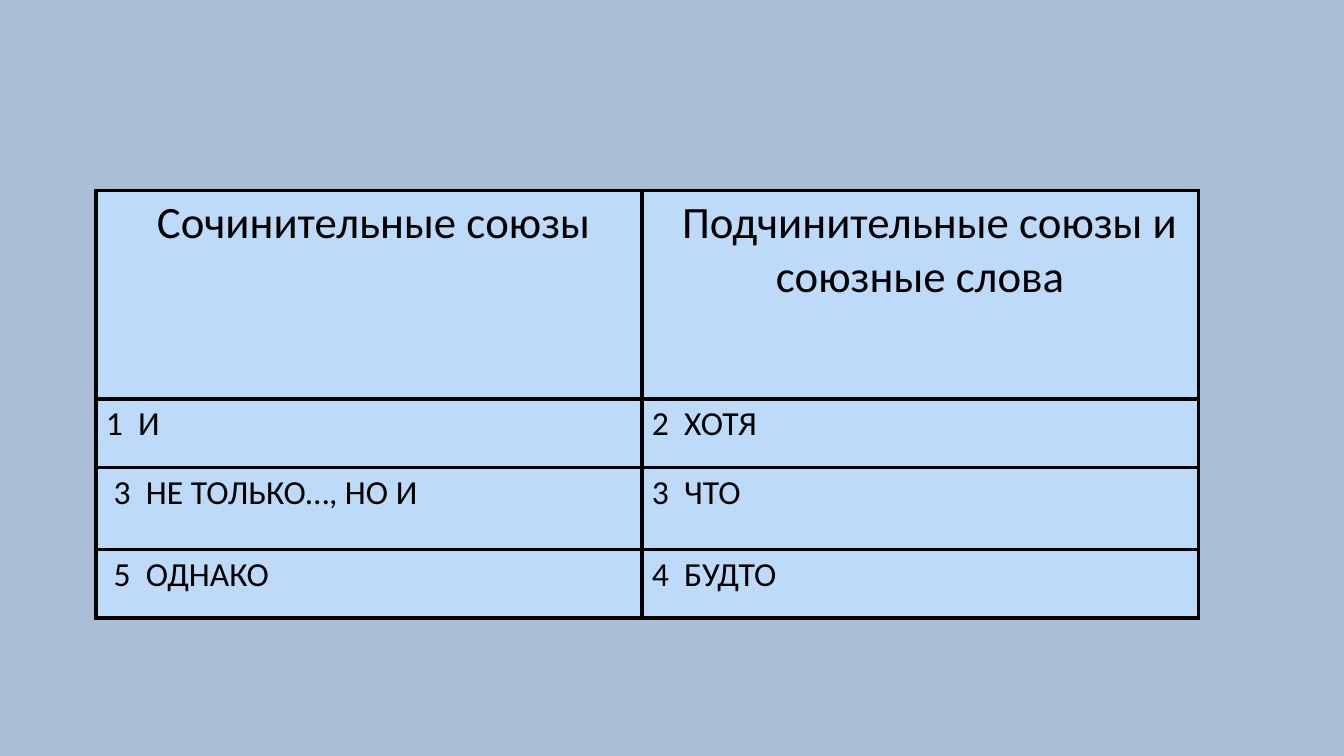
from dataclasses import dataclass

from lxml.etree import SubElement
from pptx import Presentation
from pptx.dml.color import RGBColor
from pptx.enum.text import PP_ALIGN as Align
from pptx.oxml.ns import qn
from pptx.table import _Cell as Cell
from pptx.util import Pt

FONT = "Calibri"
BACKDROP, CELL_FILL, INK = "AABED7", "BDDAF9", "000000"
COLUMN_WIDTHS = (390, 397.5)
ROW_HEIGHTS = (149, 49, 58.5, 49)
CELL_MARGIN = 7.2
WORD_TAB = 23


@dataclass
class Entry:
    text: str
    indent: float = 0


HEADINGS = [
    Entry("Сочинительные союзы", 7),
    Entry("Подчинительные союзы и союзные слова", 14),
]
CONJUNCTIONS = [
    [Entry("1\tИ"), Entry("2\tХОТЯ")],
    [Entry("3\tНЕ ТОЛЬКО…, НО И", 5.5), Entry("3\tЧТО")],
    [Entry("5\tОДНАКО", 5.5), Entry("4\tБУДТО")],
]


def color(value: str) -> RGBColor:
    return RGBColor.from_string(value)


def draw_borders(cell: Cell) -> None:
    properties = cell._tc.get_or_add_tcPr()
    for position, side in enumerate(("lnL", "lnR", "lnT", "lnB")):
        border = properties.makeelement(qn(f"a:{side}"), {"w": str(Pt(3))})
        fill = SubElement(border, qn("a:solidFill"))
        SubElement(fill, qn("a:srgbClr"), val=INK)
        properties.insert(position, border)


def fill_cell(cell: Cell, entry: Entry, heading: bool) -> None:
    cell.fill.solid()
    cell.fill.fore_color.rgb = color(CELL_FILL)
    draw_borders(cell)
    paragraph = cell.text_frame.paragraphs[0]
    paragraph.text = entry.text
    paragraph.alignment = Align.CENTER if heading else Align.JUSTIFY
    properties = paragraph._p.get_or_add_pPr()
    if heading:
        properties.set("indent", str(Pt(entry.indent)))
    else:
        cell.margin_left = Pt(CELL_MARGIN + entry.indent)
        tabs = SubElement(properties, qn("a:tabLst"))
        SubElement(tabs, qn("a:tab"), pos=str(Pt(WORD_TAB)), algn="l")
    for run in paragraph.runs:
        run.font.name = FONT
        run.font.size = Pt(32 if heading else 24)
        run.font.bold = False
        run.font.color.rgb = color(INK)


def main() -> None:
    deck = Presentation()
    deck.slide_width, deck.slide_height = Pt(960), Pt(540)
    slide = deck.slides.add_slide(deck.slide_layouts[6])

    # Background
    slide.background.fill.solid()
    slide.background.fill.fore_color.rgb = color(BACKDROP)

    # Table of conjunctions
    rows = [HEADINGS, *CONJUNCTIONS]
    conjunctions = slide.shapes.add_table(
        len(rows), len(COLUMN_WIDTHS), Pt(68.5), Pt(136),
        Pt(sum(COLUMN_WIDTHS)), Pt(sum(ROW_HEIGHTS))).table
    for column, width in zip(conjunctions.columns, COLUMN_WIDTHS):
        column.width = Pt(width)
    for row, height in zip(conjunctions.rows, ROW_HEIGHTS):
        row.height = Pt(height)
    for row_index, entries in enumerate(rows):
        for column_index, entry in enumerate(entries):
            fill_cell(conjunctions.cell(row_index, column_index), entry, row_index == 0)

    deck.save("out.pptx")


if __name__ == "__main__":
    main()
